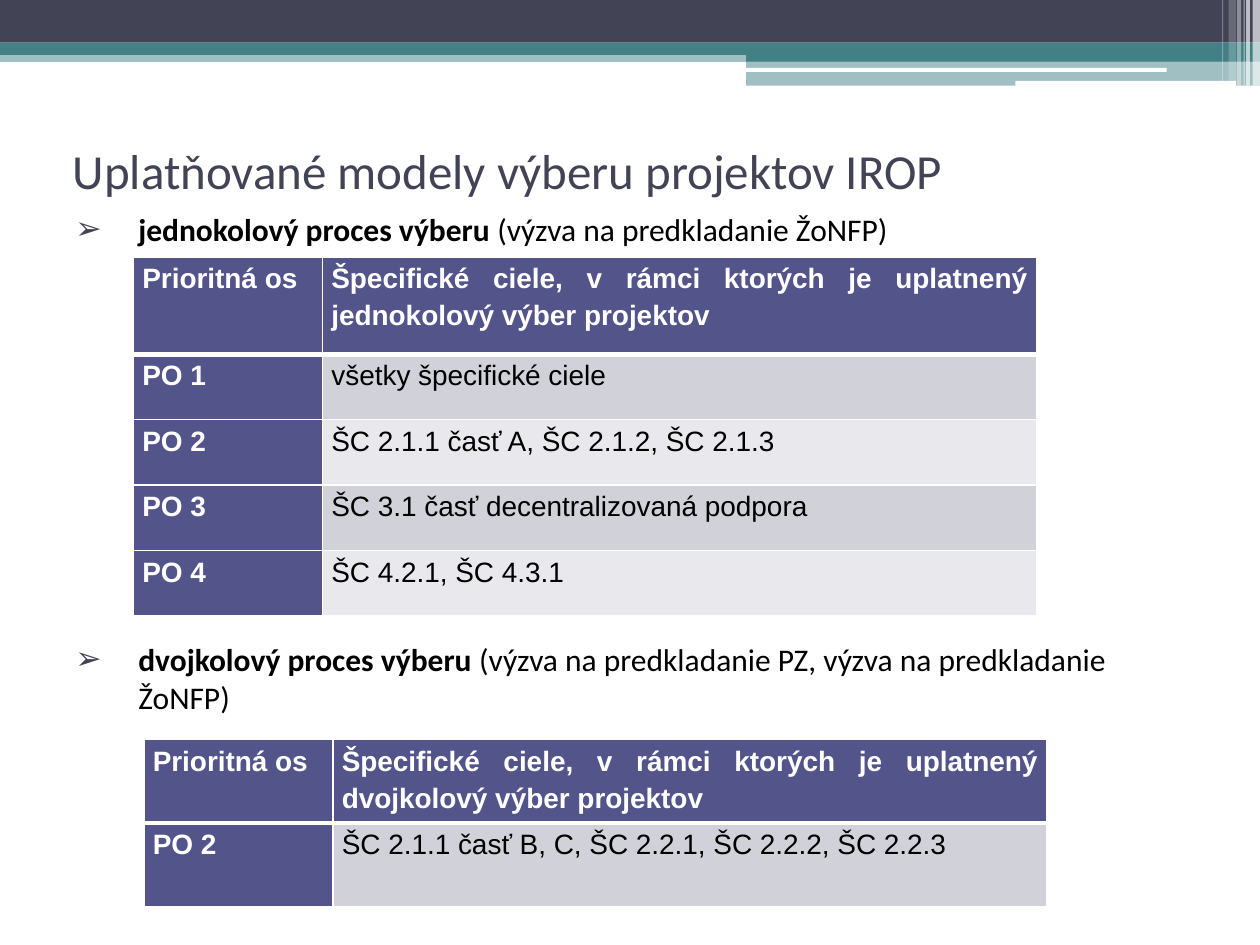
import lxml.etree
import pptx
import pptx.dml.color
import pptx.enum.shapes
import pptx.enum.text
import pptx.oxml.ns
import pptx.util

Cm, Pt = pptx.util.Cm, pptx.util.Pt
Shape = pptx.enum.shapes.MSO_SHAPE
Align = pptx.enum.text.PP_ALIGN
Anchor = pptx.enum.text.MSO_ANCHOR
qn = pptx.oxml.ns.qn


def paint(target, color):
    target.rgb = pptx.dml.color.RGBColor.from_string(color)


def fill(item, color):
    item.fill.solid()
    paint(item.fill.fore_color, color)


def node(parent, tag, **attrs):
    return lxml.etree.SubElement(parent, qn(tag), attrs)


def write(para, text, font="Calibri", size=18, color="000000", bold=False):
    """Add one formatted run to a paragraph."""
    run = para.add_run()
    run.text = text
    run.font.name, run.font.size, run.font.bold = font, Pt(size), bold
    paint(run.font.color, color)


def edge(cell, low):
    """Draw white cell borders; low is the width of the bottom one."""
    props = cell._tc.get_or_add_tcPr()
    for side, width in (("L", 1), ("R", 1), ("T", 1), ("B", low)):
        line = node(props, "a:ln" + side, w=str(Pt(width)))
        node(node(line, "a:solidFill"), "a:srgbClr", val="FFFFFF")


def bullet(para, color, sign):
    props = para._p.get_or_add_pPr()
    props.set("marL", str(Cm(1.27)))
    props.set("indent", str(-Cm(1.27)))
    node(node(props, "a:buClr"), "a:srgbClr", val=color)
    node(props, "a:buFont", typeface="Arial")
    node(props, "a:buChar", char=sign)


class Deck:
    dark, teal, white = "424456", "438086", "FFFFFF"
    head, bands = "53548A", ("E9E9ED", "D1D1DA")

    def __init__(self):
        self.file = pptx.Presentation()
        self.file.slide_width, self.file.slide_height = Cm(25.4), Cm(19.05)
        self.slide = self.file.slides.add_slide(self.file.slide_layouts[6])

    def bar(self, left, top, width, height, color, alpha=100, kind=Shape.RECTANGLE):
        shape = self.slide.shapes.add_shape(
            kind, Cm(left), Cm(top), Cm(width), Cm(height))
        shape.shadow.inherit = False
        shape.line.fill.background()
        fill(shape, color)
        if alpha < 100:
            tone = shape._element.spPr.find(".//" + qn("a:srgbClr"))
            node(tone, "a:alpha", val=str(alpha * 1000))

    def box(self, left, top, width, height):
        frame = self.slide.shapes.add_textbox(
            Cm(left), Cm(top), Cm(width), Cm(height)).text_frame
        frame.word_wrap = True
        return frame

    def title(self, text):
        frame = self.box(1.22, 2.92, 22.86, 2.21)
        frame.vertical_anchor = Anchor.MIDDLE
        frame.margin_bottom = Cm(1.32)
        write(frame.paragraphs[0], text, size=28, color=self.dark)

    def body(self, items):
        """Write bullets given as (bold part, plain part, space before)."""
        frame = self.box(1.27, 4.11, 22.86, 14.15)
        for i, (strong, plain, gap) in enumerate(items):
            para = frame.add_paragraph() if i else frame.paragraphs[0]
            para.space_before = Pt(gap)
            bullet(para, self.dark, "➢")
            write(para, strong, bold=True)
            write(para, plain)

    def table(self, left, top, sizes, rows):
        widths = (3.81, 14.4)
        grid = self.slide.shapes.add_table(
            len(rows), 2, Cm(left), Cm(top), Cm(sum(widths)), Cm(sum(sizes))).table
        for col, width in zip(grid.columns, widths):
            col.width = Cm(width)
        for r, (texts, size) in enumerate(zip(rows, sizes)):
            grid.rows[r].height = Cm(size)
            for c, text in enumerate(texts):
                self.cell(grid.cell(r, c), text, r, c)

    def cell(self, cell, text, r, c):
        strong = r == 0 or c == 0
        edge(cell, 1 if r else 3)
        fill(cell, self.head if strong else self.bands[r % 2])
        cell.margin_left = cell.margin_right = Cm(0.18)
        cell.margin_top = cell.margin_bottom = 0
        para = cell.text_frame.paragraphs[0]
        para.alignment = Align.JUSTIFY
        para.line_spacing, para.space_before = 1.2, Pt(3)
        write(para, text, font="Arial", size=16, bold=strong,
              color=self.white if strong else "000000")


def main():
    deck = Deck()
    for left, top, width, height, color, alpha in (
            (0, 1.02, 25.4, 0.23, deck.teal, 50),
            (0, 0, 25.4, 0.86, deck.dark, 100),
            (0, 0.86, 25.4, 0.25, deck.teal, 100),
            (15.04, 0.99, 10.36, 0.25, deck.teal, 100),
            (15.04, 1.22, 10.36, 0.51, deck.teal, 50)):
        deck.bar(left, top, width, height, color, alpha)
    for left, top, width, height in ((15.01, 1.37, 8.51, 0.08), (20.47, 1.63, 4.45, 0.1)):
        deck.bar(left, top, width, height, deck.white, kind=Shape.ROUNDED_RECTANGLE)
    for left, width, height, alpha in (
            (25.25, 0.15, 1.73, 65), (25.12, 0.08, 1.73, 65),
            (25.07, 0.02, 1.73, 60), (24.94, 0.08, 1.73, 40),
            (24.77, 0.15, 1.63, 20), (24.64, 0.02, 1.63, 30)):
        deck.bar(left, 0, width, height, deck.white, alpha)

    deck.title("Uplatňované modely výberu projektov IROP")
    deck.body([
        ("jednokolový proces výberu ", "(výzva na predkladanie ŽoNFP)", 3),
        ("dvojkolový proces výberu ",
         "(výzva na predkladanie PZ, výzva na predkladanie ŽoNFP)", 224)])

    def header(kind):
        return ("Prioritná os",
                f"Špecifické ciele, v rámci ktorých je uplatnený {kind} výber projektov")

    deck.table(2.69, 5.18, [1.96] + [1.32] * 4, [
        header("jednokolový"),
        ("PO 1", "všetky špecifické ciele"),
        ("PO 2", "ŠC 2.1.1 časť A, ŠC 2.1.2, ŠC 2.1.3"),
        ("PO 3", "ŠC 3.1 časť decentralizovaná podpora"),
        ("PO 4", "ŠC 4.2.1, ŠC 4.3.1")])
    deck.table(2.9, 14.91, [1.68] * 2, [
        header("dvojkolový"),
        ("PO 2", "ŠC 2.1.1 časť B, C, ŠC 2.2.1, ŠC 2.2.2, ŠC 2.2.3")])
    deck.file.save("out.pptx")


if __name__ == "__main__":
    main()
